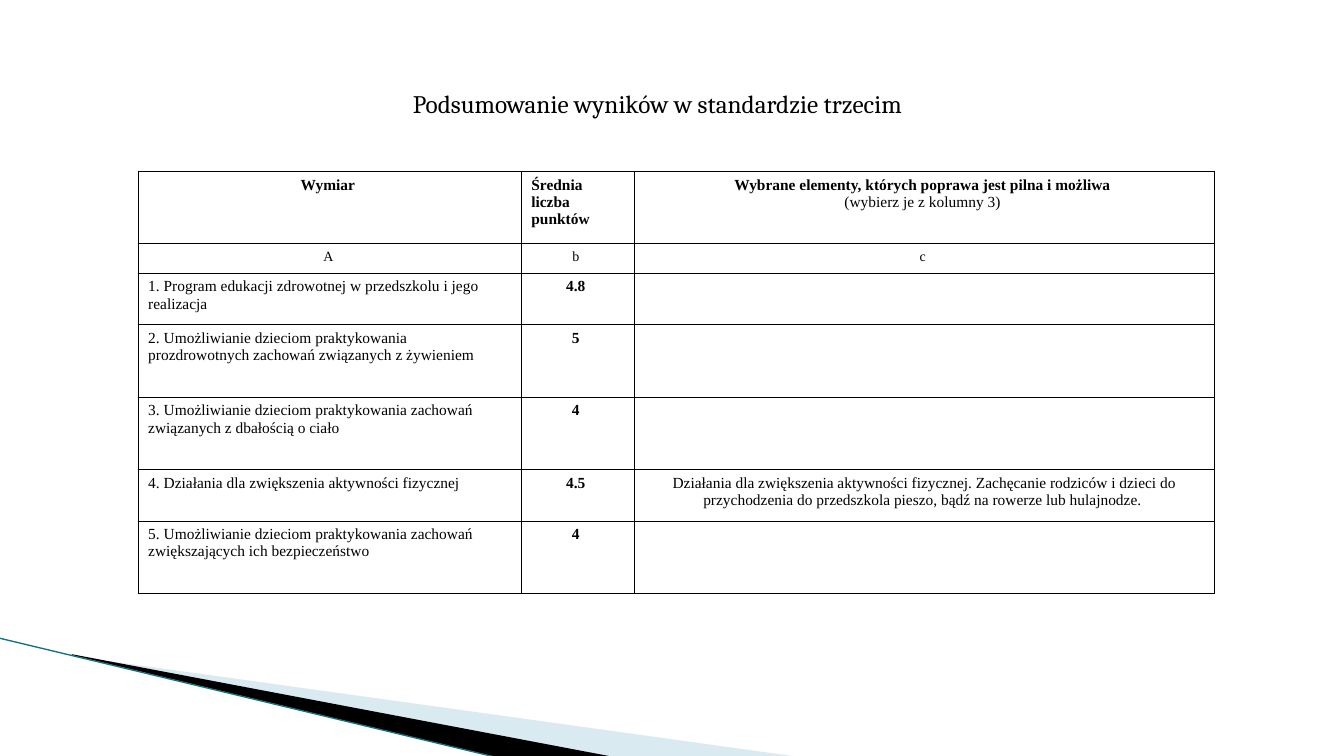
from lxml.etree import SubElement
from pptx import Presentation
from pptx.dml.color import RGBColor
from pptx.enum.shapes import MSO_CONNECTOR
from pptx.enum.text import PP_ALIGN
from pptx.oxml.ns import qn
from pptx.util import Inches, Pt

BLACK = RGBColor(0x00, 0x00, 0x00)
PALE_BLUE = RGBColor(0xA0, 0xCB, 0xDC)
TEAL = RGBColor(0x17, 0x70, 0x7F)


def write(para, text, size=11, font="Times New Roman", bold=False, align=PP_ALIGN.LEFT):
    para.alignment = align
    span = para.add_run()
    span.text = text
    span.font.size = Pt(size)
    span.font.name = font
    span.font.bold = bold
    span.font.color.rgb = BLACK


def add_border(cell, side):
    line = SubElement(cell._tc.get_or_add_tcPr(), qn("a:" + side), w=str(Pt(0.75)))
    fill = SubElement(line, qn("a:solidFill"))
    SubElement(fill, qn("a:srgbClr"), val=str(BLACK))


deck = Presentation()
deck.slide_width = Inches(13.33)
deck.slide_height = Inches(7.5)
page = deck.slides.add_slide(deck.slide_layouts[6])

# Corner wedges: outline, colour, opacity in percent
wedges = [
    ([(0.73, 6.51), (7.93, 7.51), (6.08, 7.51), (0.73, 6.5)], PALE_BLUE, 40),
    ([(0.71, 6.49), (6.09, 7.51), (4.96, 7.52), (0.72, 6.5)], BLACK, 100),
]
for outline, colour, opacity in wedges:
    points = [(Inches(x), Inches(y)) for x, y in outline]
    builder = page.shapes.build_freeform(*points[0])
    builder.add_line_segments(points[1:], close=True)
    wedge = builder.convert_to_shape()
    wedge.shadow.inherit = False
    wedge.fill.solid()
    wedge.fill.fore_color.rgb = colour
    wedge.line.fill.background()
    if opacity < 100:
        colour_element = wedge._element.spPr.find(qn("a:solidFill"))[0]
        SubElement(colour_element, qn("a:alpha"), val=str(opacity * 1000))

# Corner line
edge = page.shapes.add_connector(
    MSO_CONNECTOR.STRAIGHT, Inches(-0.01), Inches(6.33), Inches(4.95), Inches(7.52))
edge.line.color.rgb = TEAL
edge.line.width = Pt(0.95)
SubElement(edge._element.spPr, qn("a:effectLst"))

# Results table
column_widths = [3.8, 1.12, 5.76]
row_heights = [0.72, 0.29, 0.51, 0.72, 0.72, 0.51, 0.72]
rows = [
    ["Wymiar ", "Średnia liczba punktów ",
     "Wybrane elementy, których poprawa jest pilna i możliwa \n(wybierz je z kolumny 3) "],
    ["A ", "b ", "c "],
    ["1. Program edukacji zdrowotnej w przedszkolu i jego realizacja ", "4.8 ", ""],
    ["2. Umożliwianie dzieciom praktykowania prozdrowotnych zachowań związanych z żywieniem ",
     "5 ", ""],
    ["3. Umożliwianie dzieciom praktykowania zachowań związanych z dbałością o ciało ",
     "4 ", ""],
    ["4. Działania dla zwiększenia aktywności fizycznej ", "4.5 ",
     "Działania dla zwiększenia aktywności fizycznej. Zachęcanie rodziców i dzieci do "
     "przychodzenia do przedszkola pieszo, bądź na rowerze lub hulajnodze. "],
    ["5. Umożliwianie dzieciom praktykowania zachowań zwiększających ich bezpieczeństwo ",
     "4 ", ""],
]
table = page.shapes.add_table(
    len(rows), len(column_widths), Inches(1.37), Inches(1.7),
    Inches(sum(column_widths)), Inches(sum(row_heights))).table
table.first_row = False
table.horz_banding = False
for column, width in zip(table.columns, column_widths):
    column.width = Inches(width)

for r, texts in enumerate(rows):
    table.rows[r].height = Inches(row_heights[r])
    for c, text in enumerate(texts):
        cell = table.cell(r, c)
        for side in ("lnL", "lnR", "lnT", "lnB"):
            add_border(cell, side)
        cell.fill.background()
        left_aligned = (r, c) == (0, 1) or (r > 1 and c == 0)
        for n, part in enumerate(text.split("\n") if text else []):
            para = cell.text_frame.add_paragraph() if n else cell.text_frame.paragraphs[0]
            write(para, part, size=10 if r == 1 else 11,
                  bold=(r == 0 and n == 0) or (r > 1 and c == 1),
                  align=PP_ALIGN.LEFT if left_aligned else PP_ALIGN.CENTER)

# Title
box = page.shapes.add_textbox(Inches(0.21), Inches(0.83), Inches(12.62), Inches(0.71))
box.text_frame.word_wrap = True
write(box.text_frame.paragraphs[0], "Podsumowanie wyników w standardzie trzecim",
      size=18, font="Cambria", align=PP_ALIGN.CENTER)

deck.save("out.pptx")
